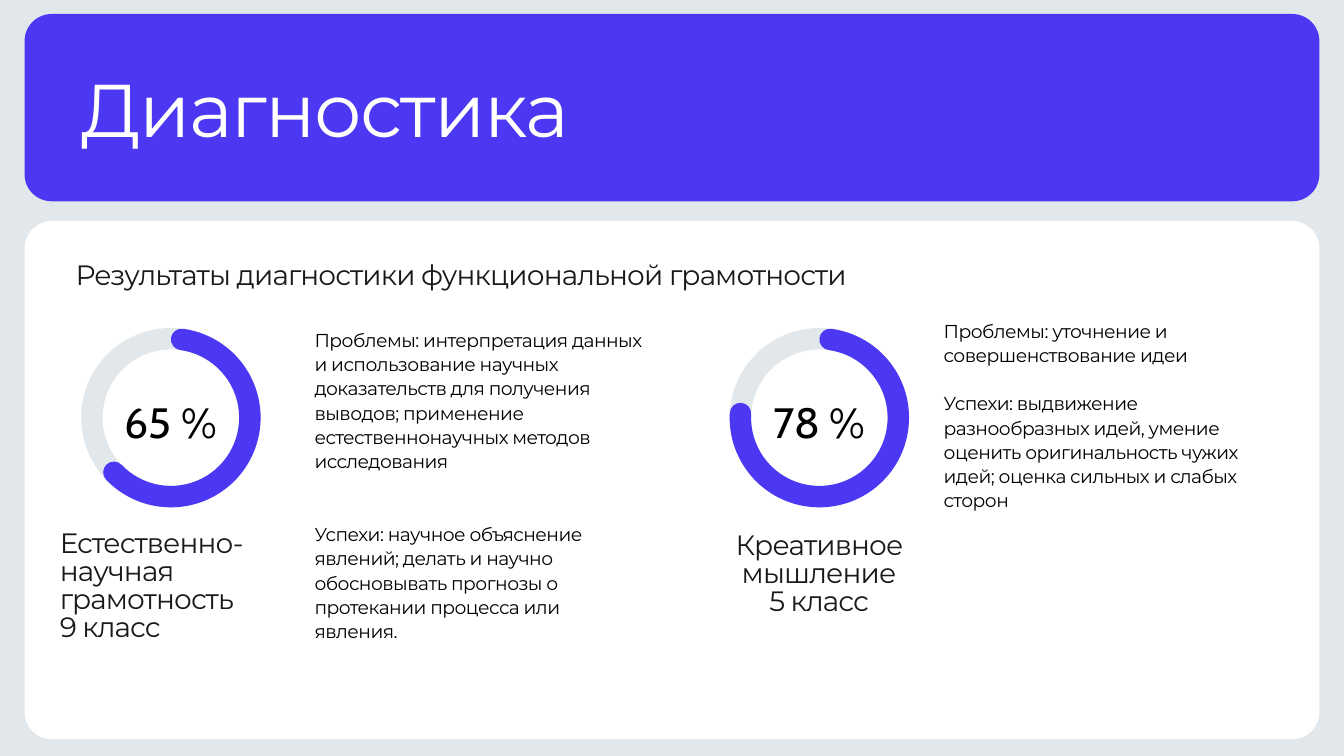
from math import asin, ceil, cos, degrees, radians, sin, tan

from lxml.etree import SubElement
from pptx import Presentation
from pptx.dml.color import RGBColor
from pptx.enum.shapes import MSO_SHAPE
from pptx.enum.text import MSO_AUTO_SIZE, PP_ALIGN
from pptx.oxml.ns import qn
from pptx.util import Cm, Pt

VIOLET = RGBColor(0x4C, 0x38, 0xF2)
MIST = RGBColor(0xE2, 0xE7, 0xEB)
WHITE = RGBColor(0xFF, 0xFF, 0xFF)
INK = RGBColor(0x19, 0x19, 0x19)
BLACK = RGBColor(0x00, 0x00, 0x00)

RING_RADIUS = 3.39
RING_WIDTH = 0.81
RING_MIDDLE = 15.79


def write(para, text, font="Montserrat", size=20, color=BLACK, tracking=0.0,
          leading=26, align=PP_ALIGN.LEFT, before=0):
    para.alignment = align
    para.line_spacing = Pt(leading)
    para.space_before = Pt(before)
    span = para.add_run()
    span.text = text
    span.font.name = font
    span.font.size = Pt(size)
    span.font.color.rgb = color
    if tracking:
        span._r.get_or_add_rPr().set("spc", str(round(tracking * 100)))


def on_circle(center, radius, angle, reach=0.0):
    turn = radians(angle)
    return (Cm(center[0] + radius * (sin(turn) + reach * cos(turn))),
            Cm(center[1] - radius * (cos(turn) - reach * sin(turn))))


def arc(center, radius, start, end):
    pieces = ceil(abs(end - start) / 91)
    step = (end - start) / pieces
    reach = 4 / 3 * tan(radians(step) / 4)
    points = []
    for index in range(pieces):
        angle = start + index * step
        points += [on_circle(center, radius, angle, reach),
                   on_circle(center, radius, angle + step, -reach),
                   on_circle(center, radius, angle + step)]
    return points


def bend(shape):
    outline = next(shape._element.iter(qn("a:path")))
    lines = outline.findall(qn("a:lnTo"))
    close = outline.find(qn("a:close"))
    for index in range(0, len(lines) - 2, 3):
        curve = SubElement(outline, qn("a:cubicBezTo"))
        for line in lines[index:index + 3]:
            curve.append(line[0])
    for line in lines:
        outline.remove(line)
    outline.append(close)


class Board:
    heading = dict(size=30, color=INK, tracking=-0.9, leading=30)
    note = dict(size=20, tracking=-0.6, leading=26)

    def __init__(self, page):
        self.page = page
        page.background.fill.solid()
        page.background.fill.fore_color.rgb = MIST

    def paint(self, shape, color):
        shape.shadow.inherit = False
        shape.fill.solid()
        shape.fill.fore_color.rgb = color
        shape.line.fill.background()

    def panel(self, top, height, color):
        box = self.page.shapes.add_shape(
            MSO_SHAPE.ROUNDED_RECTANGLE, Cm(0.93), Cm(top), Cm(48.94), Cm(height))
        box.adjustments[0] = 1.02 / height
        self.paint(box, color)

    def text(self, left, top, width, height, lines, gap=0, **style):
        box = self.page.shapes.add_textbox(Cm(left), Cm(top), Cm(width), Cm(height))
        frame = box.text_frame
        frame.word_wrap = True
        frame.auto_size = MSO_AUTO_SIZE.SHAPE_TO_FIT_TEXT
        frame.margin_left = frame.margin_right = 0
        frame.margin_top = frame.margin_bottom = 0
        for index, line in enumerate(lines):
            para = frame.add_paragraph() if index else frame.paragraphs[0]
            write(para, line, before=gap if index else 0, **style)

    def gauge(self, middle_x, percent):
        self.text(middle_x - 1.84, 14.66, 3.68, 2.08, [f"{percent} %"], font="Cabin",
                  size=45.4, leading=63.6, align=PP_ALIGN.CENTER)
        track = self.page.shapes.add_shape(
            MSO_SHAPE.DONUT, Cm(middle_x - RING_RADIUS), Cm(RING_MIDDLE - RING_RADIUS),
            Cm(2 * RING_RADIUS), Cm(2 * RING_RADIUS))
        track.adjustments[0] = RING_WIDTH / (2 * RING_RADIUS)
        self.paint(track, MIST)

        center = (middle_x, RING_MIDDLE)
        cap = RING_WIDTH / 2
        middle = RING_RADIUS - cap
        start = degrees(asin(cap / middle))
        end = 3.6 * percent - start
        start_cap, end_cap = (
            (middle_x + middle * sin(radians(angle)), RING_MIDDLE - middle * cos(radians(angle)))
            for angle in (start, end))
        points = (arc(center, RING_RADIUS, start, end)
                  + arc(end_cap, cap, end, end + 180)
                  + arc(center, RING_RADIUS - RING_WIDTH, end, start)
                  + arc(start_cap, cap, start + 180, start + 360))
        builder = self.page.shapes.build_freeform(
            *on_circle(center, RING_RADIUS, start), scale=1.0)
        builder.add_line_segments(points, close=True)
        progress = builder.convert_to_shape()
        bend(progress)
        self.paint(progress, VIOLET)


def main():
    deck = Presentation()
    deck.slide_width, deck.slide_height = Cm(50.8), Cm(28.58)
    board = Board(deck.slides.add_slide(deck.slide_layouts[6]))

    board.panel(0.53, 7.08, VIOLET)
    board.panel(8.36, 19.58, WHITE)
    board.text(3.1, 2.39, 40.18, 3.38, ["Диагностика"],
               size=80, color=WHITE, tracking=-1.6, leading=96)
    board.text(2.86, 9.96, 34.75, 1.12,
               ["Результаты диагностики функциональной грамотности"], **board.heading)

    board.gauge(6.46, 65)
    board.gauge(30.97, 78)

    board.text(2.26, 20.07, 10.59, 4.29,
               ["Естественно-научная грамотность", "9 класс"], **board.heading)
    board.text(26.26, 20.14, 9.4, 3.23, ["Креативное мышление", "5 класс"],
               align=PP_ALIGN.CENTER, **board.heading)

    board.text(11.89, 12.36, 12.45, 12.55, [
        "Проблемы: интерпретация данных и использование научных доказательств "
        "для получения выводов; применение естественнонаучных методов исследования",
        "Успехи: научное объяснение явлений; делать и научно обосновывать прогнозы "
        "о протекании процесса или явления.",
    ], gap=52, **board.note)
    board.text(35.67, 12.01, 11.3, 7.16, [
        "Проблемы: уточнение и совершенствование идеи",
        "Успехи: выдвижение разнообразных идей, умение оценить оригинальность чужих "
        "идей; оценка сильных и слабых сторон",
    ], gap=26, **board.note)

    deck.save("out.pptx")


if __name__ == "__main__":
    main()
